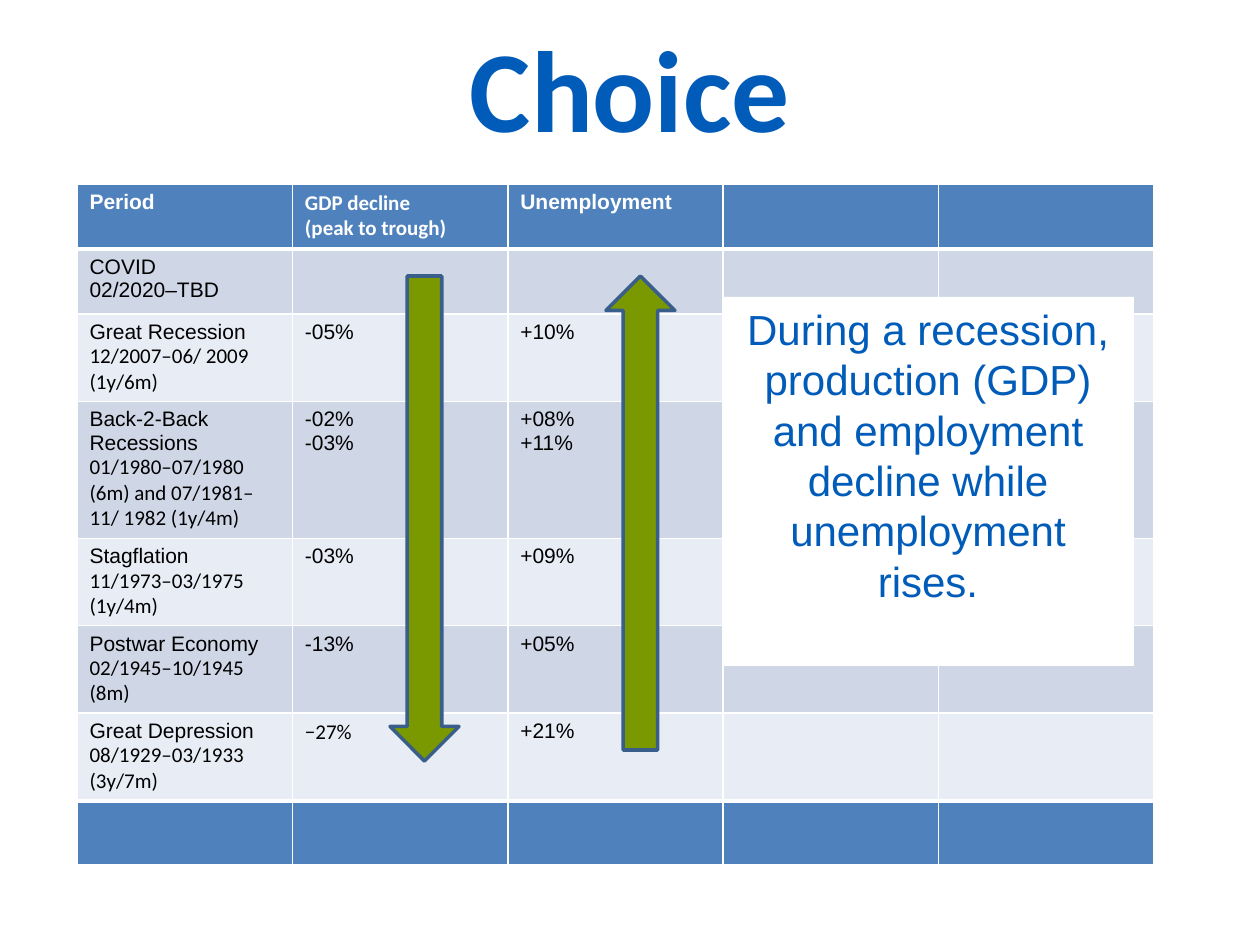
from lxml import etree
from pptx import Presentation
from pptx.dml.color import RGBColor
from pptx.enum.shapes import MSO_SHAPE
from pptx.enum.text import MSO_ANCHOR, MSO_AUTO_SIZE, PP_ALIGN
from pptx.oxml.ns import qn
from pptx.util import Emu, Pt

PX = 914400 / 126
BLUE, HEADER, GREEN, OUTLINE = "005CB8", "4F81BD", "7A9900", "395E89"
WHITE, BLACK = "FFFFFF", "000000"
BANDS = ["CFD7E7", "E8ECF4"]
SANS, BODY = "Arial", "Calibri"

COLUMNS = 5
ROW_HEIGHTS = [65, 65, 87, 137, 87, 87, 88, 64]
# Each cell is a list of (line, font); the remaining cells are empty
ROWS = [
    [[("Period", SANS)],
     [("GDP decline", BODY), ("(peak to trough)", BODY)],
     [("Unemployment", SANS)]],
    [[("COVID", SANS), ("02/2020–TBD", SANS)]],
    [[("Great Recession", SANS), ("12/2007–06/ 2009 (1y/6m)", BODY)],
     [("-05%", SANS)], [("+10%", SANS)]],
    [[("Back-2-Back Recessions", SANS),
      ("01/1980–07/1980 (6m) and 07/1981–11/ 1982 (1y/4m)", BODY)],
     [("-02%", SANS), ("-03%", SANS)],
     [("+08%", SANS), ("+11%", SANS)]],
    [[("Stagflation", SANS), ("11/1973–03/1975 (1y/4m)", BODY)],
     [("-03%", SANS)], [("+09%", SANS)]],
    [[("Postwar Economy", SANS), ("02/1945–10/1945 (8m)", BODY)],
     [("-13%", SANS)], [("+05%", SANS)]],
    [[("Great Depression", SANS), ("08/1929–03/1933 (3y/7m)", BODY)],
     [("−27%", BODY)], [("+21%", SANS)]],
    [],
]


def px(length):
    return Emu(round(length * PX))


def color(value):
    return RGBColor.from_string(value)


def set_font(paragraph, name, size, value, bold=False):
    font = paragraph.font
    font.name, font.size, font.bold = name, Pt(size), bold
    font.color.rgb = color(value)


def add_title(slide, left, top, width, height):
    title = slide.shapes.title
    title.left, title.top = px(left), px(top)
    title.width, title.height = px(width), px(height)
    frame = title.text_frame
    frame.text = "Choice"
    frame.auto_size = MSO_AUTO_SIZE.NONE
    frame.vertical_anchor = MSO_ANCHOR.MIDDLE
    paragraph = frame.paragraphs[0]
    paragraph.alignment = PP_ALIGN.CENTER
    paragraph.line_spacing = 0.86
    set_font(paragraph, BODY, 66, BLUE, bold=True)


def set_borders(cell, top, bottom):
    properties = cell._tc.get_or_add_tcPr()
    for side, points in (("L", 1), ("R", 1), ("T", top), ("B", bottom)):
        line = etree.SubElement(properties, qn(f"a:ln{side}"), w=str(Pt(points)))
        fill = etree.SubElement(line, qn("a:solidFill"))
        etree.SubElement(fill, qn("a:srgbClr"), val=WHITE)


def fill_cell(cell, lines, text_color, bold):
    frame = cell.text_frame
    for index, (text, font) in enumerate(lines):
        paragraph = frame.add_paragraph() if index else frame.paragraphs[0]
        paragraph.text = text
        set_font(paragraph, font, 12, text_color, bold)


def add_recession_table(slide, left, top, width):
    table = slide.shapes.add_table(
        len(ROWS), COLUMNS, px(left), px(top), px(width), px(sum(ROW_HEIGHTS))).table
    last = len(ROWS) - 1
    table.last_row = True
    for row, height in enumerate(ROW_HEIGHTS):
        table.rows[row].height = px(height)
        is_edge = row in (0, last)
        for column in range(COLUMNS):
            cell = table.cell(row, column)
            # Thick rules under the header and above the closing row
            set_borders(cell, 3 if row in (1, last) else 1,
                        3 if row in (0, last - 1) else 1)
            cell.fill.solid()
            cell.fill.fore_color.rgb = color(HEADER if is_edge else BANDS[(row - 1) % 2])
            if column < len(ROWS[row]):
                fill_cell(cell, ROWS[row][column], WHITE if is_edge else BLACK, row == 0)


def add_filled_shape(slide, kind, box, fill):
    shape = slide.shapes.add_shape(kind, *map(px, box))
    shape.shadow.inherit = False
    shape.fill.solid()
    shape.fill.fore_color.rgb = color(fill)
    return shape


def add_trend_arrow(slide, kind, *box):
    arrow = add_filled_shape(slide, kind, box, GREEN)
    arrow.line.color.rgb = color(OUTLINE)
    arrow.line.width = Pt(2)


def add_summary(slide, *box):
    summary = add_filled_shape(slide, MSO_SHAPE.RECTANGLE, box, WHITE)
    summary.line.fill.background()
    frame = summary.text_frame
    frame.word_wrap = True
    frame.vertical_anchor = MSO_ANCHOR.TOP
    frame.text = ("During a recession, production (GDP) and employment "
                  "decline while unemployment rises.")
    paragraph = frame.paragraphs[0]
    paragraph.alignment = PP_ALIGN.CENTER
    set_font(paragraph, SANS, 24, BLUE)


def main():
    presentation = Presentation()
    presentation.slide_width, presentation.slide_height = px(1260), px(945)
    slide = presentation.slides.add_slide(presentation.slide_layouts[5])
    add_title(slide, 63, 18, 1134, 157)
    add_recession_table(slide, 77, 184, 1077)
    add_trend_arrow(slide, MSO_SHAPE.UP_ARROW, 606, 276, 69, 474)
    add_trend_arrow(slide, MSO_SHAPE.DOWN_ARROW, 390, 276, 69, 485)
    add_summary(slide, 722, 297, 412, 369)
    presentation.save("out.pptx")


if __name__ == "__main__":
    main()
